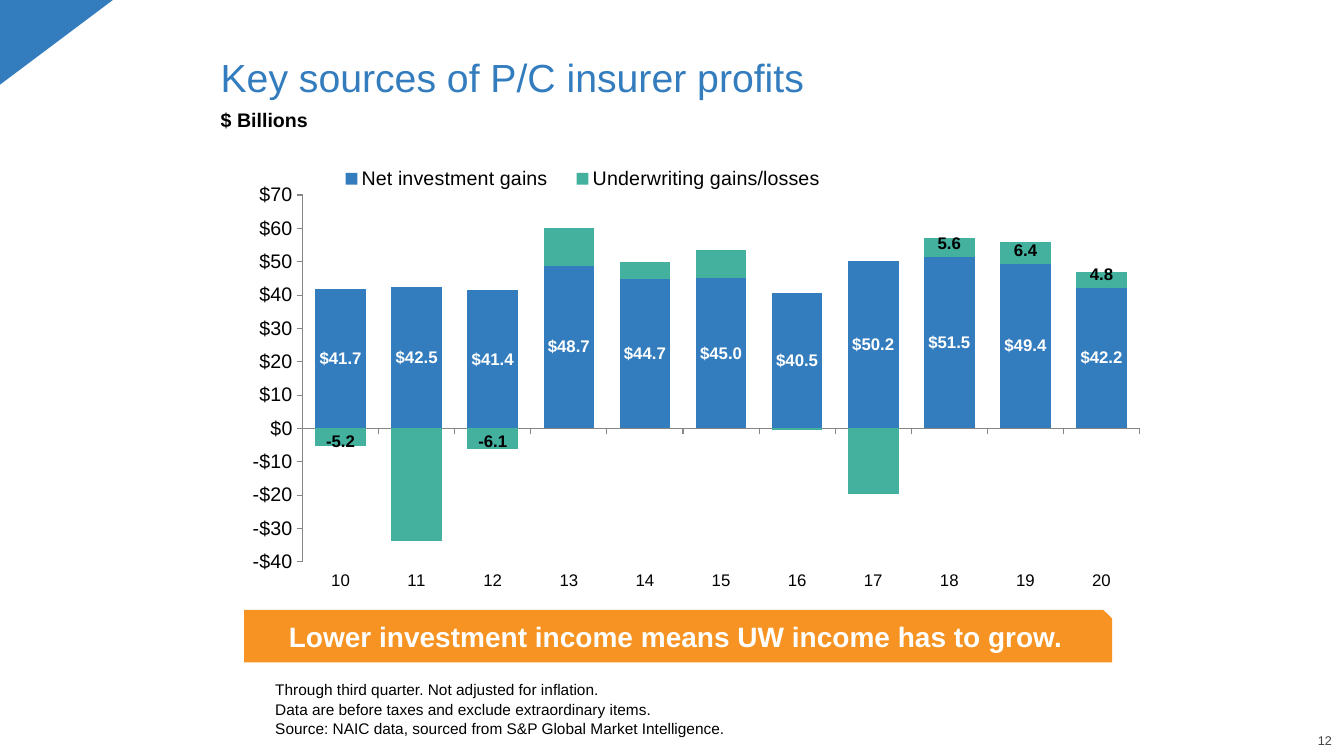
"""Build the slide on key sources of insurer profits."""
from dataclasses import dataclass

from lxml import etree
from pptx import Presentation
from pptx.chart.data import CategoryChartData
from pptx.dml.color import RGBColor
from pptx.enum.chart import (XL_CHART_TYPE, XL_LABEL_POSITION, XL_LEGEND_POSITION,
                             XL_TICK_LABEL_POSITION, XL_TICK_MARK)
from pptx.enum.shapes import MSO_SHAPE
from pptx.enum.text import MSO_ANCHOR, PP_ALIGN
from pptx.oxml.ns import qn
from pptx.util import Inches, Pt

STACKED = XL_CHART_TYPE.COLUMN_STACKED
CENTER_LABEL, BASE_LABEL = XL_LABEL_POSITION.CENTER, XL_LABEL_POSITION.INSIDE_BASE
LEGEND_BOTTOM = XL_LEGEND_POSITION.BOTTOM
LOW = XL_TICK_LABEL_POSITION.LOW
TICK_OUT, TICK_NONE = XL_TICK_MARK.OUTSIDE, XL_TICK_MARK.NONE
TRIANGLE, SNIPPED = MSO_SHAPE.RIGHT_TRIANGLE, MSO_SHAPE.SNIP_1_RECTANGLE
MIDDLE, BOTTOM = MSO_ANCHOR.MIDDLE, MSO_ANCHOR.BOTTOM
LEFT, CENTER, RIGHT = PP_ALIGN.LEFT, PP_ALIGN.CENTER, PP_ALIGN.RIGHT

YEARS = [str(year) for year in range(10, 21)]
INVESTMENT = [41.7, 42.5, 41.4, 48.7, 44.7, 45, 40.5, 50.2, 51.5, 49.4, 42.2]
UNDERWRITING = [-5.2, -33.7, -6.1, 11.5, 5.3, 8.4, -0.4, -19.8, 5.6, 6.4, 4.8]
LABELLED_YEARS = ("10", "12", "18", "19", "20")
NOTES = [
    "Through third quarter. Not adjusted for inflation.",
    "Data are before taxes and exclude extraordinary items.",
    "Source: NAIC data, sourced from S&P Global Market Intelligence.",
]


@dataclass(frozen=True)
class Theme:
    """Colours, type sizes and font of the slide."""
    font: str = "Arial"
    blue: RGBColor = RGBColor(0x33, 0x7D, 0xBE)
    green: RGBColor = RGBColor(0x43, 0xB1, 0x9E)
    orange: RGBColor = RGBColor(0xF6, 0x93, 0x22)
    black: RGBColor = RGBColor(0, 0, 0)
    white: RGBColor = RGBColor(0xFF, 0xFF, 0xFF)
    gray: RGBColor = RGBColor(0x40, 0x40, 0x40)
    axis: RGBColor = RGBColor(0x86, 0x86, 0x86)
    title: int = 28
    banner: int = 20
    heading: int = 14
    label: int = 12
    note: int = 11
    number: int = 9


def style_font(font, theme, size, color, bold=False):
    """Apply the theme font with a size, colour and weight."""
    font.name, font.size, font.bold = theme.font, Pt(size), bold
    font.color.rgb = color


def write_text(frame, theme, lines, size, color, bold=False, align=LEFT,
               anchor=MIDDLE, insets=(0.1, 0.05, 0.1, 0.05), gap=0):
    """Fill a text frame with one paragraph per line."""
    frame.word_wrap, frame.vertical_anchor = True, anchor
    (frame.margin_left, frame.margin_top,
     frame.margin_right, frame.margin_bottom) = map(Inches, insets)
    for index, line in enumerate(lines):
        para = frame.add_paragraph() if index else frame.paragraphs[0]
        para.alignment, para.line_spacing = align, 0.9
        para.space_before = Pt(gap if index else 0)
        span = para.add_run()
        span.text = line
        style_font(span.font, theme, size, color, bold)


def set_layout(parent, position, inner, **fractions):
    """Give a chart part a manual layout in fractions of the chart."""
    for old in parent.findall(qn("c:layout")):
        parent.remove(old)
    layout = etree.Element(qn("c:layout"))
    manual = etree.SubElement(layout, qn("c:manualLayout"))
    settings = {"layoutTarget": "inner"} if inner else {}
    settings.update(xMode="edge", yMode="edge", **fractions)
    for name, value in settings.items():
        etree.SubElement(manual, qn(f"c:{name}")).set("val", str(value))
    parent.insert(position, layout)


class SlideBuilder:
    """Hold the theme and slide and add elements to them."""

    def __init__(self, slide, theme):
        """Keep the slide and its theme."""
        self.slide, self.theme = slide, theme

    def text(self, box, lines, size, color, **style):
        """Add a text box."""
        shape = self.slide.shapes.add_textbox(*map(Inches, box))
        write_text(shape.text_frame, self.theme, lines, size, color, **style)

    def shape(self, kind, box, fill, rotation=0):
        """Add a plain filled shape and return it."""
        shape = self.slide.shapes.add_shape(kind, *map(Inches, box))
        shape.shadow.inherit = False
        shape.fill.solid()
        shape.fill.fore_color.rgb = fill
        shape.line.fill.background()
        shape.rotation = rotation
        return shape

    def profit_chart(self, box):
        """Add the stacked column chart of profits."""
        theme = self.theme
        data = CategoryChartData()
        data.categories = YEARS
        data.add_series("Net investment gains", INVESTMENT, '"$"#,##0.0')
        data.add_series("Underwriting gains/losses", UNDERWRITING, "0.0")
        chart = self.slide.shapes.add_chart(STACKED, *map(Inches, box), data).chart
        chart.has_title = False
        style_font(chart.font, theme, theme.label, theme.black)
        plot = chart.plots[0]
        plot.gap_width, plot.overlap, plot.vary_by_categories = 50, 100, False
        for series, color in zip(plot.series, (theme.blue, theme.green)):
            series.format.fill.solid()
            series.format.fill.fore_color.rgb = color
            series.invert_if_negative = False
        self.chart_labels(*plot.series)
        self.chart_axes(chart)
        self.chart_legend(chart)
        set_layout(chart.plots[0]._element.getparent(), 0, True,
                   x=0.108, y=0.111, w=0.887, h=0.816)

    def chart_labels(self, investment, underwriting):
        """Label every investment column and selected underwriting columns."""
        theme = self.theme
        labels = investment.data_labels
        labels.show_value, labels.position = True, CENTER_LABEL
        labels.number_format, labels.number_format_is_linked = '"$"#,##0.0', False
        style_font(labels.font, theme, theme.label, theme.white, bold=True)
        underwriting.data_labels.show_value = False
        for year in LABELLED_YEARS:
            label = underwriting.points[YEARS.index(year)].data_label
            style_font(label.font, theme, theme.label, theme.black, bold=True)
            label.position = BASE_LABEL

    def chart_axes(self, chart):
        """Style both axes."""
        theme = self.theme
        years, dollars = chart.category_axis, chart.value_axis
        years.tick_label_position = LOW
        dollars.minimum_scale, dollars.maximum_scale = -40, 70
        dollars.major_unit = 10
        dollars.tick_labels.number_format = '"$"#,##0'
        dollars.tick_labels.number_format_is_linked = False
        for axis, size in ((years, theme.label), (dollars, theme.heading)):
            axis.has_major_gridlines = False
            axis.major_tick_mark, axis.minor_tick_mark = TICK_OUT, TICK_NONE
            axis.format.line.color.rgb = theme.axis
            style_font(axis.tick_labels.font, theme, size, theme.black)

    def chart_legend(self, chart):
        """Place the legend above the columns."""
        chart.has_legend = True
        legend = chart.legend
        legend.position, legend.include_in_layout = LEGEND_BOTTOM, False
        style_font(legend.font, self.theme, self.theme.heading, self.theme.black)
        set_layout(legend._element, 1, False, x=0.13, y=0.04, w=0.55, h=0.07)


def main():
    """Compose and save the slide."""
    deck = Presentation()
    deck.slide_width, deck.slide_height = Inches(13.33), Inches(7.5)
    theme = Theme()
    page = SlideBuilder(deck.slides.add_slide(deck.slide_layouts[6]), theme)
    page.shape(TRIANGLE, (0.14, -0.14, 0.84, 1.12), theme.blue, rotation=90)
    page.text((12.57, 7.29, 0.64, 0.13), ["12"], theme.number, theme.gray,
              align=RIGHT, anchor=BOTTOM, insets=(0, 0, 0, 0))
    page.text((2.09, 0.23, 8.64, 0.82), ["Key sources of P/C insurer profits"],
              theme.title, theme.blue, anchor=BOTTOM)
    page.text((2.73, 6.8, 8.61, 0.52), NOTES, theme.note, theme.black,
              anchor=BOTTOM, insets=(0, 0, 0, 0), gap=2)
    page.profit_chart((1.99, 1.44, 9.36, 4.46))
    page.text((2.09, 1.05, 1.15, 0.31), ["$ Billions"], theme.heading,
              theme.black, bold=True)
    banner = page.shape(SNIPPED, (2.42, 6.05, 8.61, 0.52), theme.orange)
    write_text(banner.text_frame, theme,
               ["Lower investment income means UW income has to grow."],
               theme.banner, theme.white, bold=True, align=CENTER)
    deck.save("out.pptx")


if __name__ == "__main__":
    main()
